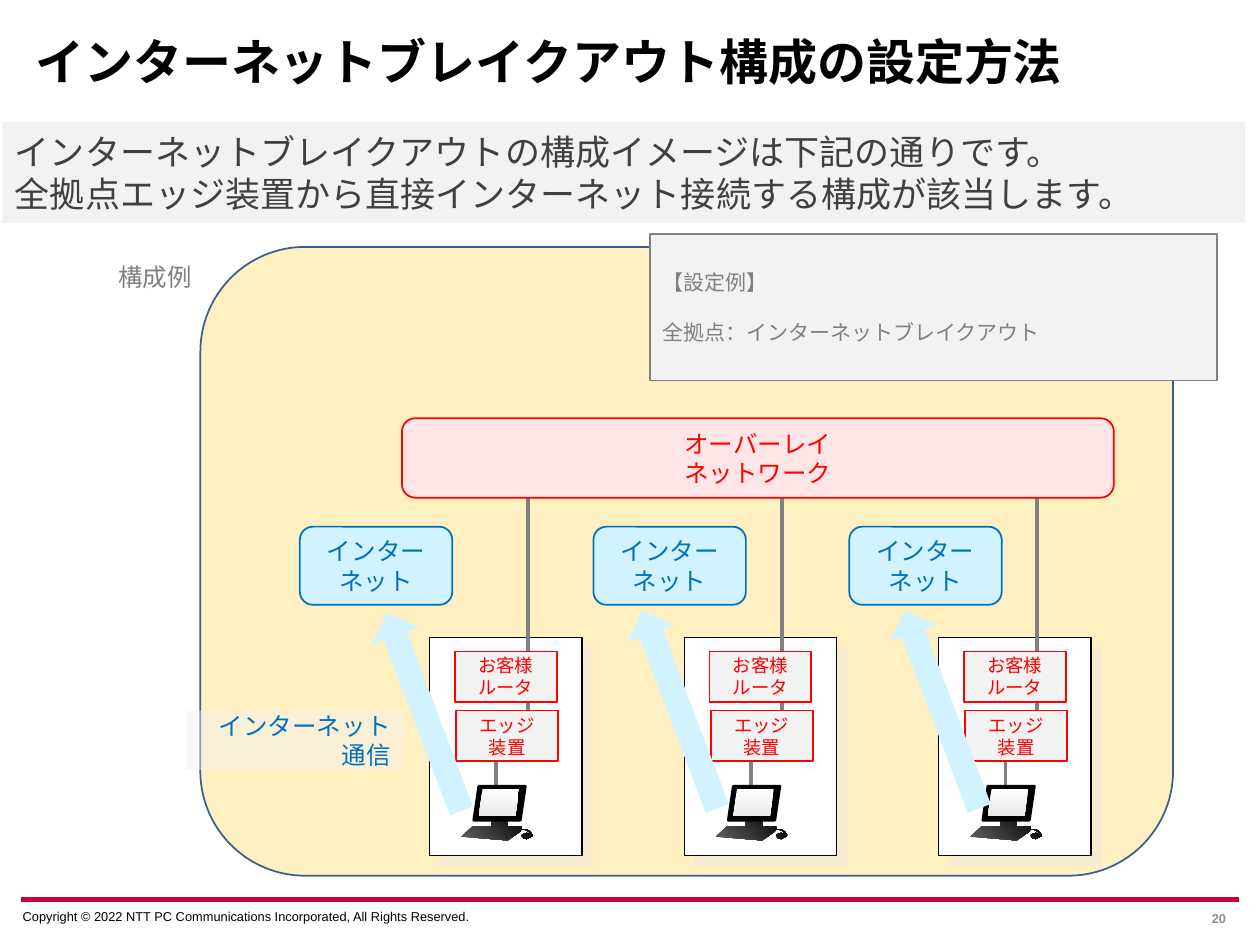
from lxml.etree import SubElement
from pptx import Presentation
from pptx.dml.color import RGBColor
from pptx.enum.shapes import MSO_CONNECTOR, MSO_SHAPE
from pptx.enum.text import MSO_ANCHOR, MSO_AUTO_SIZE, PP_ALIGN
from pptx.oxml.ns import qn
from pptx.util import Inches, Pt

BLACK = RGBColor(0x00, 0x00, 0x00)
WHITE = RGBColor(0xFF, 0xFF, 0xFF)
SMOKE = RGBColor(0x5F, 0x5F, 0x5F)
MIST = RGBColor(0xEA, 0xEA, 0xEA)
PALE = RGBColor(0xF2, 0xF2, 0xF2)
DARK = RGBColor(0x40, 0x40, 0x40)
GRAY = RGBColor(0x80, 0x80, 0x80)
SILVER = RGBColor(0x8C, 0x8C, 0x8C)
CRIMSON = RGBColor(0xCC, 0x00, 0x33)
RED = RGBColor(0xFF, 0x00, 0x00)
PINK = RGBColor(0xFF, 0xE5, 0xE5)
BLUE = RGBColor(0x00, 0x70, 0xC0)
SKY = RGBColor(0xD1, 0xF3, 0xFF)
NAVY = RGBColor(0x3A, 0x5F, 0x8C)
CREAM = RGBColor(0xFF, 0xF0, 0xC1)
GOTHIC = "Noto Sans CJK JP"

BASE = [(0.48, 0.09), (0.48, 0.07), (0.37, 0.07), (0.37, 0), (0.24, 0),
        (0.24, 0.07), (0.09, 0.07), (0, 0.15), (0.37, 0.18), (0.47, 0.11),
        (0.48, 0.09), (0.52, 0.1), (0.56, 0.13), (0.52, 0.12), (0.49, 0.13),
        (0.48, 0.14), (0.49, 0.16), (0.52, 0.17), (0.56, 0.15), (0.57, 0.14),
        (0.55, 0.11), (0.52, 0.09)]
FRAME = [(0.47, 0.02), (0.1, 0.02), (0.14, -0.25), (0.51, -0.25)]
SCREEN = [(0.43, -0.01), (0.14, -0.01), (0.17, -0.23), (0.46, -0.23)]


def write(shape, lines, size, color, align=PP_ALIGN.CENTER, face=GOTHIC,
          bold=False, gap=0, anchor=MSO_ANCHOR.MIDDLE):
    frame = shape.text_frame
    frame.word_wrap = True
    frame.vertical_anchor = anchor
    frame.text = "\n".join(lines)
    for index, para in enumerate(frame.paragraphs):
        para.alignment = align
        if index and gap:
            para.space_before = Pt(gap)
        font = para.font
        font.size = Pt(size)
        font.bold = bold
        font.color.rgb = color
        font.name = face
        props = para._p.get_or_add_pPr().find(qn("a:defRPr"))
        SubElement(props, qn("a:ea")).set("typeface", face)
    return frame


def label(slide, box, *args, **style):
    return write(slide.shapes.add_textbox(*map(Inches, box)), *args, **style)


def block(slide, box, fill, line=None, width=1, kind=MSO_SHAPE.RECTANGLE):
    shape = slide.shapes.add_shape(kind, *map(Inches, box))
    shape.shadow.inherit = False
    shape.fill.solid()
    shape.fill.fore_color.rgb = fill
    if line is None:
        shape.line.fill.background()
    else:
        shape.line.color.rgb = line
        shape.line.width = Pt(width)
    return shape


def wire(slide, x1, y1, x2, y2, color=GRAY, width=2.25):
    ends = map(Inches, (x1, y1, x2, y2))
    line = slide.shapes.add_connector(MSO_CONNECTOR.STRAIGHT, *ends)
    line.line.color.rgb = color
    line.line.width = Pt(width)
    SubElement(line._element.spPr, qn("a:effectLst"))


def shade(shape):
    effects = shape._element.spPr.find(qn("a:effectLst"))
    outer = SubElement(effects, qn("a:outerShdw"), dist=str(Pt(8.5)),
                       dir="2700000", algn="tl", rotWithShape="0")
    color = SubElement(outer, qn("a:srgbClr"), val="EEECE1")
    SubElement(color, qn("a:alpha"), val="50000")


def outline(group, x, y, points, colors, angle=0):
    spots = [(Inches(x + dx), Inches(y + dy)) for dx, dy in points]
    path = group.shapes.build_freeform(*spots[0])
    path.add_line_segments(spots[1:], close=True)
    shape = path.convert_to_shape()
    shape.shadow.inherit = False
    shape.line.fill.background()
    if len(colors) == 1:
        shape.fill.solid()
        shape.fill.fore_color.rgb = colors[0]
        shape.line.color.rgb = colors[0]
        shape.line.width = Pt(1.5)
    else:
        shape.fill.gradient()
        shape.fill.gradient_angle = angle
        for stop, color in zip(shape.fill.gradient_stops, colors):
            stop.color.rgb = color


def desktop(slide, x, y):
    group = slide.shapes.add_group_shape()
    outline(group, x, y, BASE, (SMOKE, BLACK), 45)
    outline(group, x, y, FRAME, (BLACK,))
    outline(group, x, y, SCREEN, (WHITE, MIST), 270)


def site(slide, x, y):
    shade(block(slide, (x, y, 1.21, 1.73), WHITE, BLACK, 0.75))
    wire(slide, x + 0.78, y - 1.15, x + 0.78, y + 0.58)
    wire(slide, x + 0.53, y + 0.83, x + 0.53, y + 1.31)
    desktop(slide, x + 0.25, y + 1.43)
    for dx, dy, lines in ((0.21, 0.58, ("エッジ", "装置")),
                          (0.2, 0.11, ("お客様", "ルータ"))):
        node = block(slide, (x + dx, y + dy, 0.81, 0.4), PALE, RED)
        write(node, lines, 10.5, RED)


def cloud(slide, x, y):
    shape = block(slide, (x, y, 1.21, 0.62), SKY, BLUE,
                  kind=MSO_SHAPE.ROUNDED_RECTANGLE)
    write(shape, ["インターネット"], 14, BLUE)


def arrow(slide, x, y):
    shape = block(slide, (x, y, 0.39, 1.68), SKY, kind=MSO_SHAPE.DOWN_ARROW)
    shape.rotation = 159.3


def header(slide):
    title = slide.shapes.title
    title.left, title.top = Inches(0.24), Inches(0.28)
    title.width, title.height = Inches(8.52), Inches(0.46)
    frame = write(title, ["インターネットブレイクアウト構成の設定方法"], 28, BLACK,
                  PP_ALIGN.LEFT, bold=True)
    frame.auto_size = MSO_AUTO_SIZE.NONE
    frame.word_wrap = False
    frame.margin_left = frame.margin_right = Inches(0.04)
    frame.margin_top = frame.margin_bottom = Inches(0.04)
    frame.paragraphs[0].line_spacing = 0.9


def lead(slide, x, y):
    block(slide, (x, y, 9.86, 0.8), PALE)
    label(slide, (x, y + 0.02, 9.55, 0.77),
          ["インターネットブレイクアウトの構成イメージは下記の通りです。",
           "全拠点エッジ装置から直接インターネット接続する構成が該当します。"],
          20, DARK, PP_ALIGN.LEFT, anchor=MSO_ANCHOR.TOP)


def diagram(slide, x, y):
    label(slide, (x - 1.32, y - 0.1, 1.92, 0.67), ["構成例"], 14, GRAY)
    for index in range(3):
        site(slide, x + 1.82 + 2.02 * index, y + 3.1)
    for dx in (0.79, 3.12, 5.15):
        cloud(slide, x + dx, y + 2.22)
    for dx, dy in ((1.58, 2.85), (3.61, 2.83), (5.69, 2.83)):
        arrow(slide, x + dx, y + dy)
    note = block(slide, (x - 0.11, y + 3.68, 1.72, 0.47), PALE)
    color = note._element.spPr.find(".//" + qn("a:srgbClr"))
    SubElement(color, qn("a:alpha"), val="42000")
    write(note, ["インターネット", "通信"], 14, BLUE, PP_ALIGN.RIGHT)
    layer = block(slide, (x + 1.6, y + 1.36, 5.65, 0.63), PINK, RED,
                  kind=MSO_SHAPE.ROUNDED_RECTANGLE)
    write(layer, ["オーバーレイ", "ネットワーク"], 14, RED)
    sample = block(slide, (x + 3.57, y - 0.1, 4.5, 1.16), PALE, GRAY)
    write(sample, ["【設定例】", "全拠点：インターネットブレイクアウト"], 12, GRAY,
          PP_ALIGN.LEFT, gap=14)


def footer(slide, y):
    wire(slide, 0.17, y, 9.83, y, CRIMSON, 3)
    frame = label(slide, (0.18, y + 0.07, 5.65, 0.12),
                  ["Copyright © 2022 NTT PC Communications Incorporated, "
                   "All Rights Reserved."], 7.3, BLACK, PP_ALIGN.LEFT,
                  "Arial", anchor=MSO_ANCHOR.TOP)
    frame.margin_left = frame.margin_right = 0
    frame.margin_top = frame.margin_bottom = 0
    frame = label(slide, (7.53, y - 0.01, 2.25, 0.31), ["20"], 7.3, SILVER,
                  PP_ALIGN.RIGHT, "Arial", bold=True)
    frame.margin_left = frame.margin_right = Inches(0.05)


def main():
    deck = Presentation()
    deck.slide_width, deck.slide_height = Inches(10), Inches(7.5)
    slide = deck.slides.add_slide(deck.slide_layouts[5])
    footer(slide, 7.14)
    block(slide, (1.59, 1.96, 7.72, 4.99), CREAM, NAVY,
          kind=MSO_SHAPE.ROUNDED_RECTANGLE)
    header(slide)
    lead(slide, 0.02, 0.97)
    diagram(slide, 1.59, 1.96)
    deck.save("out.pptx")


if __name__ == "__main__":
    main()
